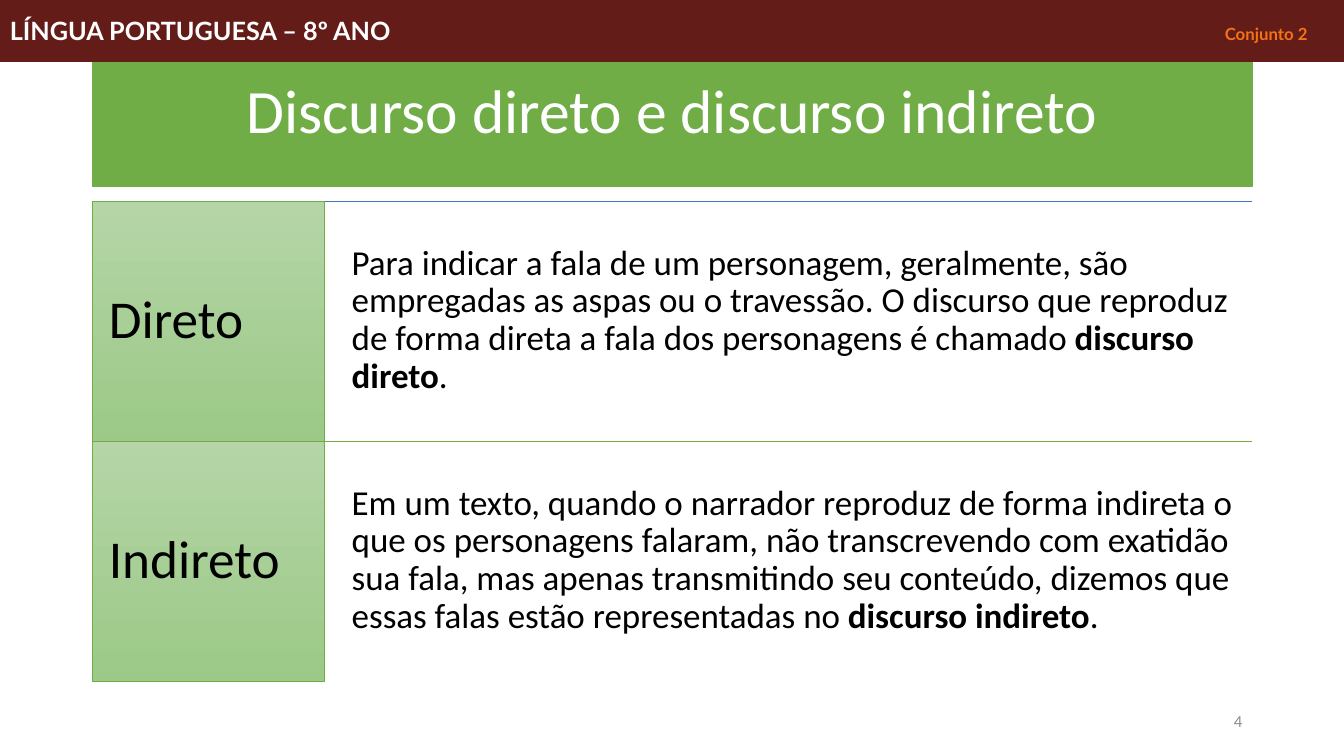
from lxml import etree
from pptx import Presentation
from pptx.dml.color import RGBColor
from pptx.enum.shapes import MSO_CONNECTOR, MSO_SHAPE
from pptx.enum.text import MSO_ANCHOR, PP_ALIGN
from pptx.oxml.ns import qn
from pptx.util import Inches, Pt

GREEN, WINE, WHITE, BLACK = "70AD47", "631C18", "FFFFFF", "000000"
LEFT, TOP, WIDTH, ROW = 0.92, 2, 11.5, 2.38

ROWS = [
    ("Direto", "4472C4",
     "Para indicar a fala de um personagem, geralmente, são empregadas as aspas "
     "ou o travessão. O discurso que reproduz de forma direta a fala dos "
     "personagens é chamado ", "discurso direto"),
    ("Indireto", GREEN,
     "Em um texto, quando o narrador reproduz de forma indireta o que os "
     "personagens falaram, não transcrevendo com exatidão sua fala, mas apenas "
     "transmitindo seu conteúdo, dizemos que essas falas estão representadas no ",
     "discurso indireto"),
]


def color(code):
    return RGBColor.from_string(code)


def style(size, tint=BLACK, bold=False, name="Calibri"):
    return {"size": Pt(size), "bold": bold, "name": name, "tint": tint}


def write(shape, runs, align=PP_ALIGN.LEFT, pad=0.1, side=None, space=1.0):
    """Fill a shape with one paragraph of (text, style) runs."""
    frame = shape.text_frame
    edge = Inches(pad)
    form = {"word_wrap": True, "vertical_anchor": MSO_ANCHOR.MIDDLE,
            "margin_left": edge, "margin_right": edge,
            "margin_top": Inches(0.05), "margin_bottom": Inches(0.05)}
    for key, value in form.items():
        setattr(frame, key, value)
    para = frame.paragraphs[0]
    para.alignment = align
    para.line_spacing = space
    for text, look in runs:
        run = para.add_run()
        run.text = text
        for key, value in look.items():
            if key == "tint":
                run.font.color.rgb = color(value)
            else:
                setattr(run.font, key, value)
    return para


def box(slide, area, fill, line=None, weight=1):
    """Rectangle with a plain fill, or a downward gradient for a pair."""
    shape = slide.shapes.add_shape(MSO_SHAPE.RECTANGLE, *map(Inches, area))
    shape.shadow.inherit = False
    if isinstance(fill, tuple):
        shape.fill.gradient()
        shape.fill.gradient_angle = 270
        for stop, code in zip(shape.fill.gradient_stops, fill):
            stop.color.rgb = color(code)
    else:
        shape.fill.solid()
        shape.fill.fore_color.rgb = color(fill)
    if line:
        shape.line.color.rgb = color(line)
        shape.line.width = Pt(weight)
    else:
        shape.line.fill.background()
    return shape


def rule(slide, top, tint):
    ends = map(Inches, (LEFT, top, LEFT + WIDTH, top))
    line = slide.shapes.add_connector(MSO_CONNECTOR.STRAIGHT, *ends)
    line.line.color.rgb = color(tint)
    line.line.width = Pt(1)
    etree.SubElement(line._element.spPr, qn("a:effectLst"))


def topic(slide, top, label, tint, text, term):
    """One row: rule, green label and explanation."""
    rule(slide, top, tint)
    tag = box(slide, (LEFT, top, 2.3, ROW), ("B5D5A7", "9CC987"), GREEN, 0.5)
    write(tag, [(label, style(38))], pad=0.16, space=0.9)
    body = box(slide, (3.39, top + 0.1, 9.03, 2.16), WHITE)
    runs = [(text, style(25)), (term, style(25, bold=True)), (".", style(25))]
    write(body, runs, space=0.9)


def header(slide):
    """Top band, with a tab stop for the set name."""
    band = box(slide, (0, 0, 13.33, 0.61), WINE, WINE, 0.75)
    para = write(band, [
        ("LÍNGUA PORTUGUESA – 8º ANO\t", style(18, WHITE, True, "Lato")),
        ("Conjunto 2", style(12, "F47116", True, "Lato"))])
    tabs = etree.SubElement(para._p.get_or_add_pPr(), qn("a:tabLst"))
    etree.SubElement(tabs, qn("a:tab"), pos=str(Inches(12.05)), algn="l")


def main():
    deck = Presentation()
    deck.slide_width, deck.slide_height = Inches(13.33), Inches(7.5)
    slide = deck.slides.add_slide(deck.slide_layouts[6])

    # Title
    title = box(slide, (LEFT, 0.4, WIDTH, 1.45), GREEN, GREEN)
    write(title, [("Discurso direto e discurso indireto", style(44, WHITE))],
          PP_ALIGN.CENTER, space=0.9)

    # Topics
    for i, row in enumerate(ROWS):
        topic(slide, TOP + i * ROW, *row)

    # Page number
    page = slide.shapes.add_textbox(*map(Inches, (9.42, 6.95, 3, 0.4)))
    write(page, [("4", style(12, "8C8C8C"))], PP_ALIGN.RIGHT)

    header(slide)
    deck.save("out.pptx")


if __name__ == "__main__":
    main()
